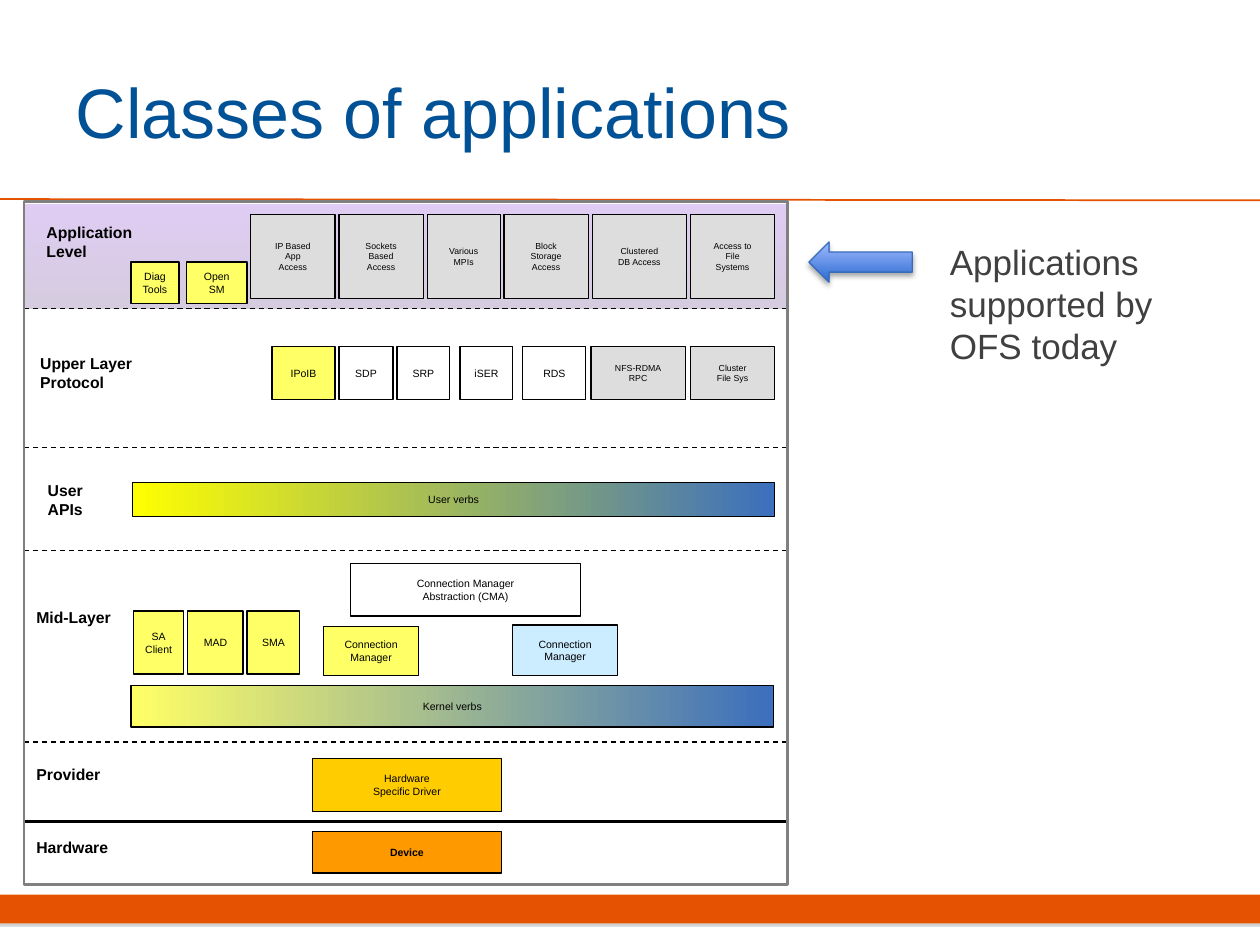
from collections import namedtuple
from dataclasses import dataclass

from lxml import etree
from pptx import Presentation
from pptx.dml.color import RGBColor
from pptx.enum.dml import MSO_LINE
from pptx.enum.shapes import MSO_CONNECTOR, MSO_SHAPE
from pptx.enum.text import MSO_ANCHOR, PP_ALIGN
from pptx.oxml.ns import qn
from pptx.util import Inches, Pt

RECT, ARROW = MSO_SHAPE.RECTANGLE, MSO_SHAPE.LEFT_ARROW
LEFT, CENTER = PP_ALIGN.LEFT, PP_ALIGN.CENTER
TOP, MIDDLE = MSO_ANCHOR.TOP, MSO_ANCHOR.MIDDLE
STRAIGHT, DASH = MSO_CONNECTOR.STRAIGHT, MSO_LINE.DASH

Box = namedtuple("Box", "x y w h")


@dataclass(frozen=True)
class Theme:
    """Colours, font and type sizes of the slide."""
    font: str = "Arial"
    title: str = "005195"
    body: str = "404040"
    ink: str = "000000"
    rust: str = "E55302"
    frame: str = "808080"
    white: str = "FFFFFF"
    yellow: str = "FFFF66"
    gray: str = "DDDDDD"
    sky: str = "CCECFF"
    gold: str = "FFCC00"
    orange: str = "FF9900"
    edge: str = "386CBC"
    purple: tuple = ("6600CC", "2F005E")
    user: tuple = ("FFFF00", "3C6FBD")
    kernel: tuple = ("FFFF66", "3C6FBD")
    blue: tuple = ("296BD0", "A2BAFF")
    head: int = 40
    note: int = 20
    label: int = 9
    base: int = 6
    small: int = 5


THEME = Theme()


def rgb(code):
    """Turn a hex code into a colour."""
    return RGBColor.from_string(code)


def place(box, x, y, w, h):
    """Give a box set at an offset inside another."""
    return Box(box.x + x, box.y + y, w, h)


def size(box):
    """Give the four lengths of a box."""
    return [Inches(n) for n in box]


def write(shape, text, size=THEME.base, color=THEME.ink, bold=False,
          align=CENTER, anchor=MIDDLE, wrap=False):
    """Fill a shape with text, one paragraph a line."""
    frame = shape.text_frame
    frame.text = text
    frame.word_wrap = wrap
    frame.vertical_anchor = anchor
    for para in frame.paragraphs:
        para.alignment = align
        for run in para.runs:
            run.font.name = THEME.font
            run.font.size = Pt(size)
            run.font.bold = bold
            run.font.color.rgb = rgb(color)


def blend(fill, pair, angle, alpha=None):
    """Set a gradient of two colours."""
    fill.gradient()
    fill.gradient_angle = angle
    for stop, code, spot in zip(fill.gradient_stops, pair, (0, 1)):
        stop.color.rgb = rgb(code)
        stop.position = spot


def fade(shape, alpha):
    """Make the fill of a shape see-through, in percent."""
    for node in shape._element.spPr.find(qn("a:gradFill")).iter(
            qn("a:srgbClr")):
        etree.SubElement(node, qn("a:alpha"), val=str(alpha * 1000))


def shade(shape, color, blur):
    """Cast a soft shadow straight down."""
    effects = shape._element.spPr.find(qn("a:effectLst"))
    outer = etree.SubElement(
        effects, qn("a:outerShdw"), blurRad=str(Pt(blur)),
        dist=str(Pt(1.8)), dir="5400000", rotWithShape="0")
    node = etree.SubElement(outer, qn("a:srgbClr"), val=color)
    etree.SubElement(node, qn("a:alpha"), val="35000")


def draw(slide, box, fill=None, edge=THEME.ink, width=0.75, kind=RECT,
         angle=0):
    """Add a preset shape with flat, blended or no fill."""
    shape = slide.shapes.add_shape(kind, *size(box))
    shape.shadow.inherit = False
    if fill is None:
        shape.fill.background()
    elif isinstance(fill, tuple):
        blend(shape.fill, fill, angle)
    else:
        shape.fill.solid()
        shape.fill.fore_color.rgb = rgb(fill)
    if edge:
        shape.line.color.rgb = rgb(edge)
        shape.line.width = Pt(width)
    else:
        shape.line.fill.background()
    return shape


def rule(slide, x, y, end, drop=0, color=THEME.ink, width=0.75, dash=None):
    """Add a line from left to right."""
    line = slide.shapes.add_connector(
        STRAIGHT, Inches(x), Inches(y), Inches(end), Inches(y + drop))
    line.line.color.rgb = rgb(color)
    line.line.width = Pt(width)
    line.line.dash_style = dash
    etree.SubElement(line._element.spPr, qn("a:effectLst"))


def tile(slide, box, text, fill, **form):
    """Add a box with a caption."""
    write(draw(slide, box, fill), text, **form)


def row(slide, box, gap, tiles, **form):
    """Set tiles side by side from the left of a box."""
    x = 0
    for text, width, fill in tiles:
        tile(slide, place(box, x, 0, width, box.h), text, fill, **form)
        x += width + gap


def label(slide, box, text):
    """Add the bold name of a layer."""
    write(slide.shapes.add_textbox(*size(box)), text, size=THEME.label,
          bold=True, align=LEFT, anchor=TOP, wrap=True)


def apps(slide, box):
    """Draw the application layer."""
    fade(draw(slide, box, THEME.purple, edge=None, angle=270), 20)
    label(slide, place(box, 0.08, 0.1, 1.21, 0.4), "Application\nLevel")
    row(slide, place(box, 0.85, 0.46, 0.92, 0.33), 0.06,
        [("Diag\nTools", 0.38, THEME.yellow),
         ("Open\nSM", 0.48, THEME.yellow)])
    names = [("IP Based\nApp\nAccess", 0.67), ("Sockets\nBased\nAccess", 0.67),
             ("Various\nMPIs", 0.58), ("Block\nStorage\nAccess", 0.67),
             ("Clustered\nDB Access", 0.75),
             ("Access to\nFile\nSystems", 0.67)]
    row(slide, place(box, 1.8, 0.08, 4.16, 0.67), 0.03,
        [(text, width, THEME.gray) for text, width in names],
        size=THEME.small)


def upper(slide, box):
    """Draw the upper layer protocols."""
    label(slide, place(box, 0.03, 0.31, 1.08, 0.4), "Upper Layer Protocol")
    row(slide, place(box, 1.97, 0.3, 1.41, 0.42), 0.03,
        [("IPoIB", 0.5, THEME.yellow), ("SDP", 0.43, THEME.white),
         ("SRP", 0.42, THEME.white)])
    row(slide, place(box, 3.46, 0.3, 1, 0.42), 0.08,
        [("iSER", 0.42, THEME.white), ("RDS", 0.5, THEME.white)])
    row(slide, place(box, 4.5, 0.3, 1.46, 0.42), 0.04,
        [("NFS-RDMA\nRPC", 0.75, THEME.gray),
         ("Cluster\nFile Sys", 0.67, THEME.gray)], size=THEME.small)


def user(slide, box):
    """Draw the user interfaces."""
    label(slide, place(box, 0.09, 0.22, 1.42, 0.4), "User\nAPIs")
    tile(slide, place(box, 0.86, 0.28, 5.1, 0.27), "User verbs", THEME.user)


def middle(slide, box):
    """Draw the middle layer."""
    label(slide, place(box, 0, 0.4, 1.08, 0.25), "Mid-Layer")
    row(slide, place(box, 0.87, 0.48, 1.32, 0.5), 0.03,
        [("SA\nClient", 0.4, THEME.yellow), ("MAD", 0.44, THEME.yellow),
         ("SMA", 0.42, THEME.yellow)])
    for x, y, w, h, text, fill in (
            (2.59, 0.1, 1.83, 0.42, "Connection Manager\nAbstraction (CMA)",
             THEME.white),
            (2.38, 0.6, 0.75, 0.39, "Connection\nManager", THEME.yellow),
            (3.88, 0.59, 0.83, 0.4, "Connection\nManager", THEME.sky),
            (0.85, 1.07, 5.1, 0.33, "Kernel verbs", THEME.kernel)):
        tile(slide, place(box, x, y, w, h), text, fill)


def driver(slide, box):
    """Draw the provider layer."""
    label(slide, place(box, 0, 0.13, 1.08, 0.25), "Provider")
    tile(slide, place(box, 2.29, 0.13, 1.5, 0.42),
         "Hardware\nSpecific Driver", THEME.gold)


def device(slide, box):
    """Draw the hardware layer."""
    label(slide, place(box, 0, 0.08, 1.08, 0.25), "Hardware")
    tile(slide, place(box, 2.29, 0.08, 1.5, 0.33), "Device", THEME.orange,
         bold=True)


def stack(slide, box):
    """Draw the layers, their dividers and the frame."""
    tops = [0.02, 0.85, 1.95, 2.77, 4.29, 4.92, box.h]
    layers = [apps, upper, user, middle, driver, device]
    for layer, top, end in zip(layers, tops, tops[1:]):
        layer(slide, place(box, 0, top, box.w, end - top))
    for top in tops[1:-2]:
        rule(slide, box.x, box.y + top, box.x + box.w, dash=DASH)
    rule(slide, box.x, box.y + tops[-2], box.x + box.w, width=2.25)
    draw(slide, box, edge=THEME.frame, width=1.5)


def aside(slide, box):
    """Draw the arrow and the remark beside the layers."""
    arrow = draw(slide, place(box, 0, 0.06, 0.82, 0.32), THEME.blue,
                 edge=THEME.edge, kind=ARROW, angle=90)
    shade(arrow, THEME.ink, 3.1)
    note = slide.shapes.add_textbox(*size(place(box, 1.02, 0, 2.18, box.h)))
    write(note, "Applications supported by OFS today", size=THEME.note,
          color=THEME.body, align=LEFT, anchor=TOP, wrap=True)


def decor(slide, box):
    """Draw the bar at the foot and the line under the title."""
    bar = draw(slide, place(box, 0, 7.1, box.w, 0.23), THEME.rust, edge=None)
    shade(bar, THEME.frame, 0)
    rule(slide, box.x, box.y + 1.58, box.x + box.w, drop=0.01,
         color=THEME.rust, width=1)


def heading(slide, box):
    """Place and format the title."""
    title = slide.shapes.title
    title.left, title.top, title.width, title.height = size(box)
    write(title, "Classes of applications", size=THEME.head,
          color=THEME.title, align=LEFT, wrap=True)


def main():
    """Build and save the slide."""
    deck = Presentation()
    deck.slide_width, deck.slide_height = Inches(10), Inches(7.5)
    slide = deck.slides.add_slide(deck.slide_layouts[5])
    decor(slide, Box(0, 0, 10, 7.5))
    heading(slide, Box(0.5, 0.25, 8.17, 1.25))
    stack(slide, Box(0.19, 1.6, 6.06, 5.42))
    aside(slide, Box(6.42, 1.86, 3.2, 1.11))
    deck.save("out.pptx")


if __name__ == "__main__":
    main()
